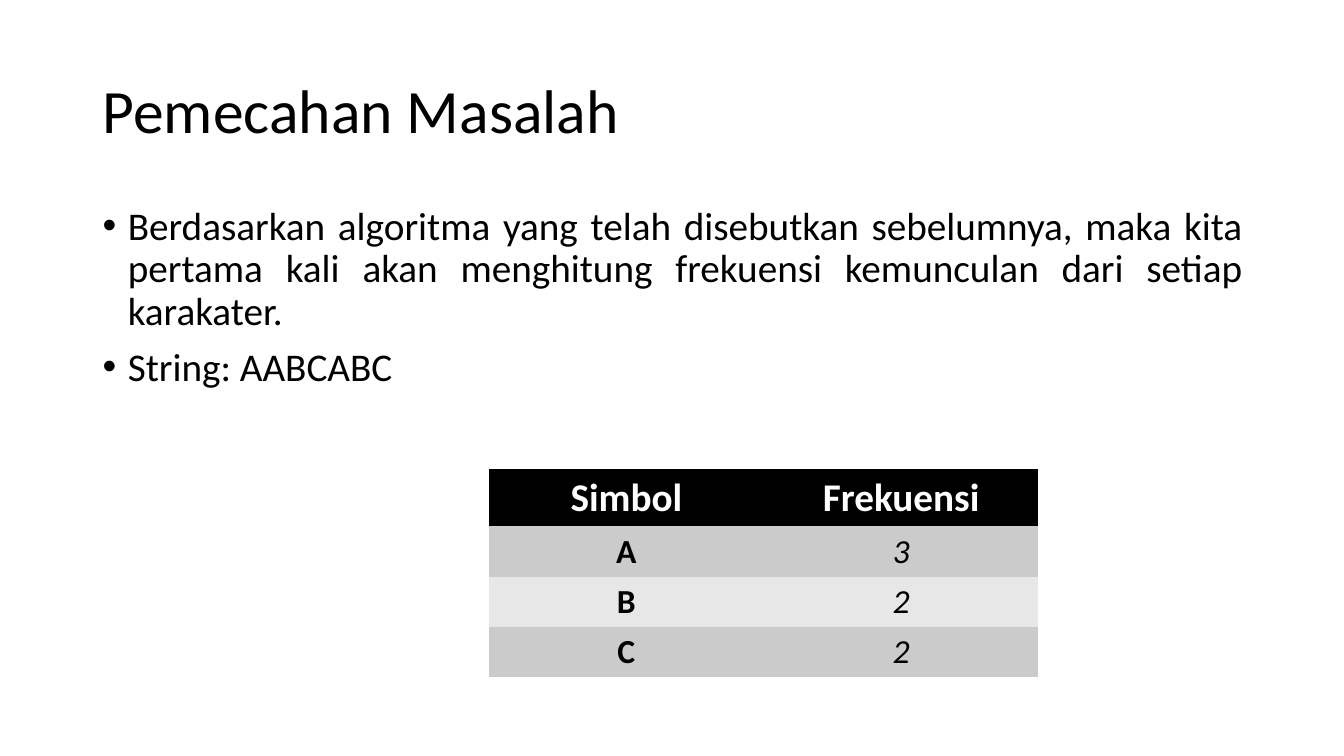
from dataclasses import dataclass

from lxml import etree
from pptx import Presentation
from pptx.dml.color import RGBColor
from pptx.enum.text import MSO_ANCHOR, PP_ALIGN
from pptx.oxml.ns import qn
from pptx.util import Inches, Pt

CENTER, JUSTIFY = PP_ALIGN.CENTER, PP_ALIGN.JUSTIFY
TOP, MIDDLE = MSO_ANCHOR.TOP, MSO_ANCHOR.MIDDLE
PLAIN_TABLE_STYLE = "{2D5ABB26-0587-4C30-8999-92F81FD0307C}"


@dataclass(frozen=True)
class Theme:
    font: str = "Calibri"
    ink: RGBColor = RGBColor(0x00, 0x00, 0x00)
    paper: RGBColor = RGBColor(0xFF, 0xFF, 0xFF)
    bands: tuple = (RGBColor(0xCB, 0xCB, 0xCB), RGBColor(0xE7, 0xE7, 0xE7))
    title_size: int = 44
    body_size: int = 28
    cell_size: int = 24


class SlideBuilder:
    def __init__(self, slide, theme):
        self.slide = slide
        self.theme = theme

    def format_runs(self, paragraph, size, color, bold=False, italic=False):
        for run in paragraph.runs:
            font = run.font
            font.name, font.size = self.theme.font, Pt(size)
            font.bold, font.italic = bold, italic
            font.color.rgb = color

    def add_text(self, left, top, width, height, text, size, anchor):
        shape = self.slide.shapes.add_textbox(
            Inches(left), Inches(top), Inches(width), Inches(height))
        frame = shape.text_frame
        frame.word_wrap = True
        frame.vertical_anchor = anchor
        frame.text = text
        for paragraph in frame.paragraphs:
            paragraph.line_spacing = 0.9
            self.format_runs(paragraph, size, self.theme.ink)
        return frame

    def add_title(self, left, top, width, height, text):
        self.add_text(left, top, width, height, text, self.theme.title_size, MIDDLE)

    def add_bullets(self, left, top, width, height, items):
        frame = self.add_text(left, top, width, height, "\n".join(items),
                              self.theme.body_size, TOP)
        for paragraph in frame.paragraphs:
            paragraph.alignment = JUSTIFY
            paragraph.space_before = Pt(10)
            properties = paragraph._p.get_or_add_pPr()
            properties.set("marL", str(Inches(0.25)))
            properties.set("indent", str(Inches(-0.25)))
            etree.SubElement(properties, qn("a:buFont")).set("typeface", "Arial")
            etree.SubElement(properties, qn("a:buChar")).set("char", "•")

    def add_table(self, left, top, width, row_heights, rows):
        """Add a table with a dark header, banded rows and a bold first column."""
        theme = self.theme
        frame = self.slide.shapes.add_table(
            len(rows), len(rows[0]), Inches(left), Inches(top),
            Inches(width), Inches(sum(row_heights)))
        table = frame.table
        table._tbl.tblPr.find(qn("a:tableStyleId")).text = PLAIN_TABLE_STYLE
        for row_index, values in enumerate(rows):
            table.rows[row_index].height = Inches(row_heights[row_index])
            header = row_index == 0
            fill = theme.ink if header else theme.bands[(row_index - 1) % 2]
            size = theme.body_size if header else theme.cell_size
            color = theme.paper if header else theme.ink
            for column_index, value in enumerate(values):
                cell = table.cell(row_index, column_index)
                cell.fill.solid()
                cell.fill.fore_color.rgb = fill
                cell.text_frame.text = value
                paragraph = cell.text_frame.paragraphs[0]
                paragraph.alignment = CENTER
                bold = header or column_index == 0
                self.format_runs(paragraph, size, color, bold, not bold)


def main():
    presentation = Presentation()
    presentation.slide_width = Inches(13.33)
    presentation.slide_height = Inches(7.5)
    slide = presentation.slides.add_slide(presentation.slide_layouts[6])
    builder = SlideBuilder(slide, Theme())
    builder.add_title(0.92, 0.4, 11.5, 1.45, "Pemecahan Masalah")
    builder.add_bullets(0.92, 2, 11.5, 4.76, [
        "Berdasarkan algoritma yang telah disebutkan sebelumnya, maka kita "
        "pertama kali akan menghitung frekuensi kemunculan dari setiap karakater.",
        "String: AABCABC",
    ])
    builder.add_table(4.85, 4.65, 5.45, [0.57, 0.5, 0.5, 0.5], [
        ("Simbol", "Frekuensi"),
        ("A", "3"),
        ("B", "2"),
        ("C", "2"),
    ])
    presentation.save("out.pptx")


if __name__ == "__main__":
    main()
